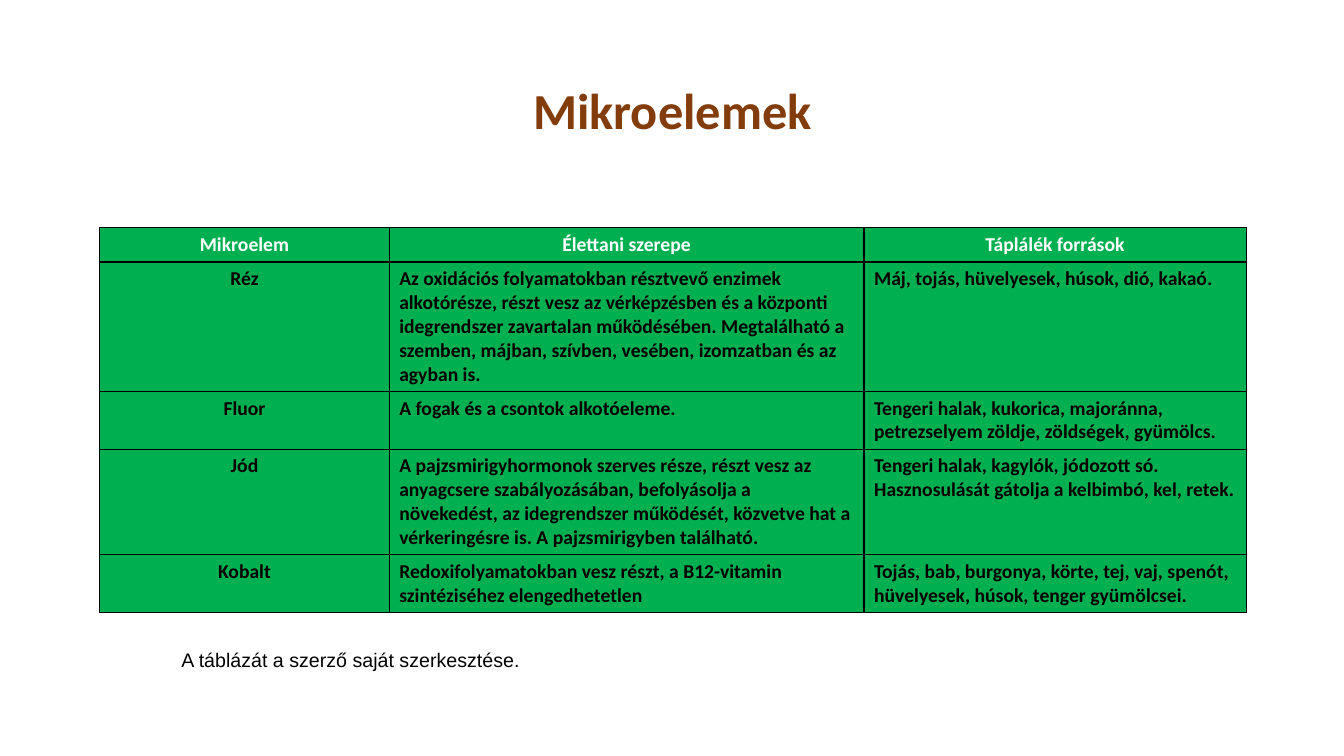
from lxml.etree import SubElement
from pptx import Presentation
from pptx.dml.color import RGBColor
from pptx.enum.text import MSO_ANCHOR, MSO_AUTO_SIZE, PP_ALIGN
from pptx.oxml.ns import qn
from pptx.util import Inches, Pt

COLORS = {"title": "833C0B", "fill": "00B050", "header": "FFFFFF", "text": "000000", "border": "000000"}
TITLE = "Mikroelemek"
CREDIT = "A táblázát a szerző saját szerkesztése."
ROWS = [
    ("Mikroelem", "Élettani szerepe", "Táplálék források"),
    ("Réz",
     "Az oxidációs folyamatokban résztvevő enzimek alkotórésze, részt vesz az vérképzésben "
     "és a központi idegrendszer zavartalan működésében. Megtalálható a szemben, májban, "
     "szívben, vesében, izomzatban és az agyban is.",
     "Máj, tojás, hüvelyesek, húsok, dió, kakaó."),
    ("Fluor",
     "A fogak és a csontok alkotóeleme.",
     "Tengeri halak, kukorica, majoránna, petrezselyem zöldje, zöldségek, gyümölcs."),
    ("Jód",
     "A pajzsmirigyhormonok szerves része, részt vesz az anyagcsere szabályozásában, "
     "befolyásolja a növekedést, az idegrendszer működését, közvetve hat a vérkeringésre is. "
     "A pajzsmirigyben található.",
     "Tengeri halak, kagylók, jódozott só. Hasznosulását gátolja a kelbimbó, kel, retek."),
    ("Kobalt",
     "Redoxifolyamatokban vesz részt, a B12-vitamin szintéziséhez elengedhetetlen",
     "Tojás, bab, burgonya, körte, tej, vaj, spenót, hüvelyesek, húsok, tenger gyümölcsei."),
]
COLUMN_WIDTHS = (2.87, 4.71, 3.79)
ROW_HEIGHTS = (0.34, 1.28, 0.57, 1.04, 0.57)


def write(frame, text, color, align=None, **font_format):
    frame.text = text
    para = frame.paragraphs[0]
    para.alignment = align
    span = para.runs[0]
    for name, value in font_format.items():
        setattr(span.font, name, value)
    span.font.color.rgb = RGBColor.from_string(COLORS[color])
    return para


def fill_cell(cell):
    """Give the cell black borders and a solid fill."""
    properties = cell._tc.get_or_add_tcPr()
    for side in ("lnL", "lnR", "lnT", "lnB"):
        line = SubElement(properties, qn(f"a:{side}"), w=str(Pt(1)))
        solid = SubElement(line, qn("a:solidFill"))
        SubElement(solid, qn("a:srgbClr"), val=COLORS["border"])
    cell.fill.solid()
    cell.fill.fore_color.rgb = RGBColor.from_string(COLORS["fill"])


def add_elements_table(page):
    table = page.shapes.add_table(
        len(ROWS), len(COLUMN_WIDTHS), Inches(0.99), Inches(2.26),
        Inches(sum(COLUMN_WIDTHS)), Inches(sum(ROW_HEIGHTS))).table
    table.horz_banding = False
    for column, width in zip(table.columns, COLUMN_WIDTHS):
        column.width = Inches(width)
    for row, height in zip(table.rows, ROW_HEIGHTS):
        row.height = Inches(height)
    for r, texts in enumerate(ROWS):
        for c, text in enumerate(texts):
            cell = table.cell(r, c)
            fill_cell(cell)
            centred = r == 0 or c == 0
            write(cell.text_frame, text, "text" if r else "header",
                  PP_ALIGN.CENTER if centred else PP_ALIGN.LEFT,
                  name="Calibri", size=Pt(14), bold=True)


def main():
    deck = Presentation()
    deck.slide_width, deck.slide_height = Inches(13.33), Inches(7.5)
    page = deck.slides.add_slide(deck.slide_layouts[5])

    title = page.shapes.title
    title.left, title.top, title.width, title.height = map(Inches, (0.35, 0.4, 12.64, 1.45))
    title.text_frame.vertical_anchor = MSO_ANCHOR.MIDDLE
    para = write(title.text_frame, TITLE, "title", PP_ALIGN.CENTER,
                 name="Calibri", size=Pt(36), bold=True)
    para.line_spacing = 0.9

    add_elements_table(page)

    credit = page.shapes.add_textbox(*map(Inches, (1.7, 6.38, 3.59, 0.57)))
    credit.text_frame.word_wrap = True
    credit.text_frame.auto_size = MSO_AUTO_SIZE.SHAPE_TO_FIT_TEXT
    write(credit.text_frame, CREDIT, "text", name="Arial", size=Pt(14))

    deck.save("out.pptx")


if __name__ == "__main__":
    main()
